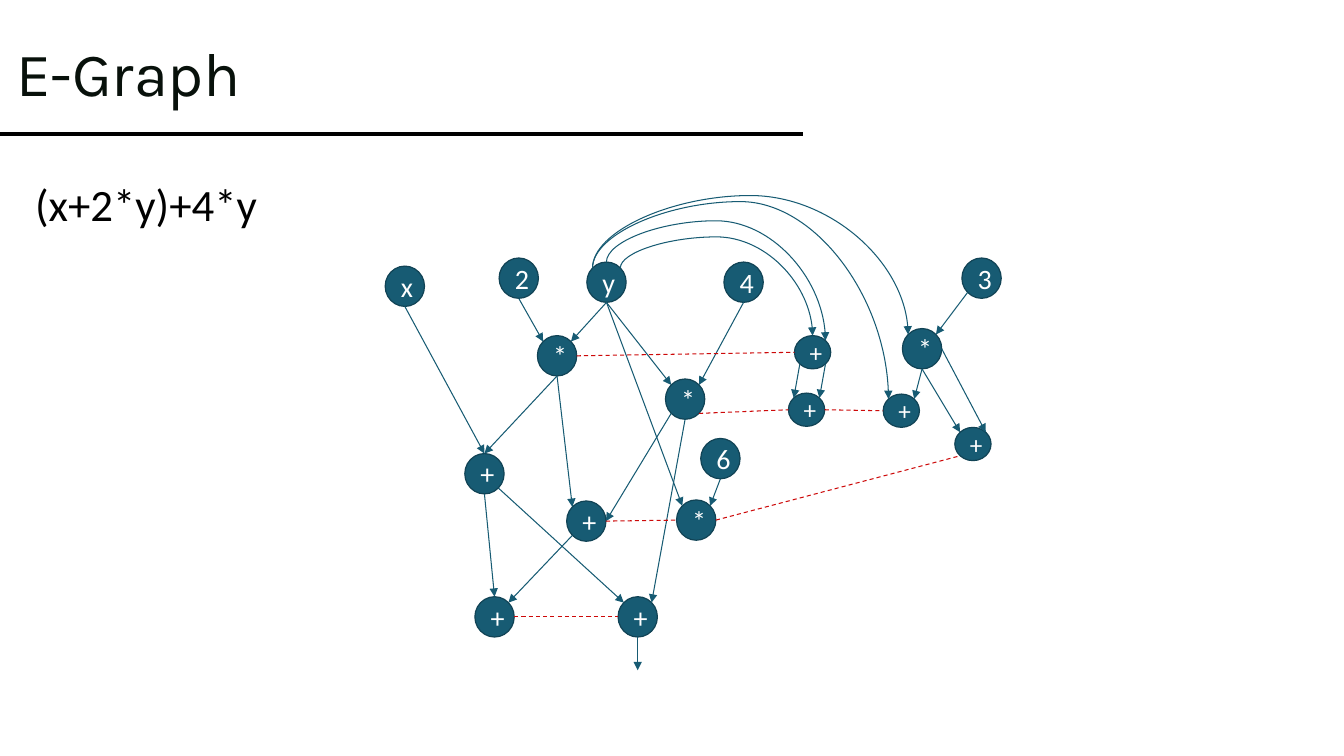
from math import cos, pi, sin

from lxml import etree
from pptx import Presentation
from pptx.dml.color import RGBColor
from pptx.enum.dml import MSO_LINE
from pptx.enum.shapes import MSO_CONNECTOR, MSO_SHAPE
from pptx.enum.text import MSO_ANCHOR, MSO_AUTO_SIZE, PP_ALIGN
from pptx.oxml.ns import qn
from pptx.util import Inches, Pt

STRAIGHT, CURVE = MSO_CONNECTOR.STRAIGHT, MSO_CONNECTOR.CURVE
ELLIPSE = MSO_SHAPE.OVAL
MIDDLE = MSO_ANCHOR.MIDDLE
CENTER, LEFT = PP_ALIGN.CENTER, PP_ALIGN.LEFT
DASH = MSO_LINE.DASH
NO_FIT, FIT_SHAPE = MSO_AUTO_SIZE.NONE, MSO_AUTO_SIZE.SHAPE_TO_FIT_TEXT

THEME = {
    "title": RGBColor(0x08, 0x11, 0x0B),
    "black": RGBColor(0, 0, 0),
    "white": RGBColor(255, 255, 255),
    "node": RGBColor(0x17, 0x5B, 0x73),
    "outline": RGBColor(0x11, 0x43, 0x55),
    "equal": RGBColor(0xCD, 0x09, 0x09),
    "title_font": "Karla",
    "body_font": "Calibri",
    "title_size": Pt(44),
    "formula_size": Pt(32),
    "large_size": Pt(20),
    "small_size": Pt(18),
}

# Grid of square cells, ten to the inch
CELL = Inches(0.1)
LARGE, SMALL = (3.9, 4), (3.6, 3.3)

# Connection sites of an ellipse, counter-clockwise from the top
TOP, TOP_LEFT, LEFT_SIDE, BOTTOM_LEFT, BOTTOM, BOTTOM_RIGHT, RIGHT_SIDE, TOP_RIGHT = range(8)


def set_font(paragraph, name, size, color):
    paragraph.font.name = name
    paragraph.font.size = size
    paragraph.font.color.rgb = color


def add_line(kind, start, end, color, width=0.75, arrow=False):
    connector = slide.shapes.add_connector(kind, *(round(value * CELL) for value in start + end))
    connector.line.color.rgb = color
    connector.line.width = Pt(width)
    if arrow:
        etree.SubElement(connector.line._get_or_add_ln(), qn("a:tailEnd"), type="triangle")
    etree.SubElement(connector.element.spPr, qn("a:effectLst"))
    return connector


presentation = Presentation()
presentation.slide_width = Inches(13.33)
presentation.slide_height = Inches(7.5)
slide = presentation.slides.add_slide(presentation.slide_layouts[5])

# Title and its rule
title = slide.shapes.title
title.left, title.top, title.width, title.height = (round(n * CELL) for n in (0.6, 0.3, 75.1, 14.5))
title.text_frame.text = "E-Graph"
title.text_frame.vertical_anchor = MIDDLE
title.text_frame.auto_size = NO_FIT
paragraph = title.text_frame.paragraphs[0]
paragraph.alignment = LEFT
paragraph.line_spacing = 0.9
set_font(paragraph, THEME["title_font"], THEME["title_size"], THEME["title"])
add_line(STRAIGHT, (0, 13.3), (79.6, 13.3), THEME["black"], 2.25)

# Formula
formula = slide.shapes.add_textbox(*(round(n * CELL) for n in (2.5, 17, 24.3, 6.4)))
formula.text_frame.text = "(x+2*y)+4*y"
formula.text_frame.word_wrap = False
formula.text_frame.auto_size = FIT_SHAPE
set_font(formula.text_frame.paragraphs[0], THEME["body_font"], THEME["formula_size"], THEME["black"])

# Nodes: label, left column, top row, size
NODES = {
    "x": ("x", 38.2, 26.4, LARGE),
    "y": ("y", 58.2, 26, LARGE),
    "two": ("2", 49.5, 25.6, LARGE),
    "four": ("4", 71.8, 26, LARGE),
    "six": ("6", 69.5, 43.5, LARGE),
    "three": ("3", 95.4, 25.6, LARGE),
    "2y": ("*", 53.3, 33.3, LARGE),
    "4y": ("*", 66, 37.6, LARGE),
    "6y": ("*", 67.1, 49.6, LARGE),
    "3y": ("*", 89.5, 32.6, LARGE),
    "x+2y": ("+", 46.1, 45, LARGE),
    "2y+4y": ("+", 56.2, 49.7, LARGE),
    "x+6y": ("+", 47.1, 59.2, LARGE),
    "result": ("+", 61.3, 59.2, LARGE),
    "y+y": ("+", 78.8, 33.3, SMALL),
    "2y+2y": ("+", 78.2, 39, SMALL),
    "y+3y": ("+", 87.6, 39.1, SMALL),
    "3y+3y": ("+", 94.7, 42.4, SMALL),
}
node_shapes = {}
sites = {}
for name, (label, left, top, (width, height)) in NODES.items():
    shape = slide.shapes.add_shape(ELLIPSE, *(round(n * CELL) for n in (left, top, width, height)))
    shape.shadow.inherit = False
    shape.fill.solid()
    shape.fill.fore_color.rgb = THEME["node"]
    shape.line.color.rgb = THEME["outline"]
    shape.line.width = Pt(0.85)
    shape.text_frame.text = label
    shape.text_frame.vertical_anchor = MIDDLE
    paragraph = shape.text_frame.paragraphs[0]
    paragraph.alignment = CENTER
    size = THEME["large_size"] if height == LARGE[1] else THEME["small_size"]
    set_font(paragraph, THEME["body_font"], size, THEME["white"])
    node_shapes[name] = shape
    for site in range(8):
        angle = site * pi / 4
        sites[name, site] = (left + width / 2 * (1 - sin(angle)), top + height / 2 * (1 - cos(angle)))

# Straight edges: arrows carry operands, dashes join equal nodes
ARROWS = [
    ("y", BOTTOM, "2y", TOP_RIGHT),
    ("two", BOTTOM, "2y", TOP_LEFT),
    ("x", BOTTOM, "x+2y", TOP),
    ("2y", BOTTOM, "x+2y", TOP),
    ("x+2y", BOTTOM_RIGHT, "result", TOP_LEFT),
    ("4y", BOTTOM, "result", TOP_RIGHT),
    ("y", BOTTOM, "4y", TOP_LEFT),
    ("four", BOTTOM, "4y", TOP_RIGHT),
    ("y+y", BOTTOM_LEFT, "2y+2y", TOP_LEFT),
    ("y+y", BOTTOM_RIGHT, "2y+2y", TOP_RIGHT),
    ("2y+4y", BOTTOM_LEFT, "x+6y", TOP_RIGHT),
    ("2y", BOTTOM, "2y+4y", TOP_LEFT),
    ("4y", BOTTOM_LEFT, "2y+4y", RIGHT_SIDE),
    ("x+2y", BOTTOM, "x+6y", TOP),
    ("y", BOTTOM, "6y", TOP_LEFT),
    ("six", BOTTOM, "6y", TOP_RIGHT),
    ("three", BOTTOM_LEFT, "3y", TOP_RIGHT),
    ("3y", BOTTOM, "y+3y", TOP_RIGHT),
    ("3y", BOTTOM, "3y+3y", TOP_LEFT),
    ("3y", RIGHT_SIDE, "3y+3y", TOP_RIGHT),
]
EQUALITIES = [
    ("2y", RIGHT_SIDE, "y+y", LEFT_SIDE),
    ("4y", BOTTOM_RIGHT, "2y+2y", LEFT_SIDE),
    ("x+6y", RIGHT_SIDE, "result", LEFT_SIDE),
    ("2y+4y", RIGHT_SIDE, "6y", LEFT_SIDE),
    ("2y+2y", RIGHT_SIDE, "y+3y", LEFT_SIDE),
    ("6y", RIGHT_SIDE, "3y+3y", BOTTOM_LEFT),
]
for edges, color, arrow in ((ARROWS, THEME["node"], True), (EQUALITIES, THEME["equal"], False)):
    for source, source_site, target, target_site in edges:
        edge = add_line(STRAIGHT, sites[source, source_site], sites[target, target_site], color, arrow=arrow)
        if not arrow:
            edge.line.dash_style = DASH
        links = edge.element.nvCxnSpPr.cNvCxnSpPr
        for tag, name, site in (("a:stCxn", source, source_site), ("a:endCxn", target, target_site)):
            etree.SubElement(links, qn(tag), id=str(node_shapes[name].shape_id), idx=str(site))

# Output arrow
column, row = sites["result", BOTTOM]
add_line(STRAIGHT, (column, row), (column, row + 3.3), THEME["node"], arrow=True)

# Arcs from y, with the row of their control points
ARCS = [
    (TOP_RIGHT, "y+y", TOP, 23.5),
    (TOP, "y+y", TOP_RIGHT, 21.9),
    (TOP_LEFT, "3y", TOP_LEFT, 19.4),
    (TOP_LEFT, "y+3y", TOP_LEFT, 20),
]
for source_site, target, target_site, peak in ARCS:
    (x1, y1), (x2, y2) = sites["y", source_site], sites[target, target_site]
    middle_x, middle_y = (x1 + x2) / 2, (y1 + y2) / 2
    half_width, half_height = (y2 - y1) / 2, (x2 - x1) / 2
    arc = add_line(CURVE, (middle_x - half_width, middle_y - half_height),
                   (middle_x + half_width, middle_y + half_height), THEME["node"], arrow=True)
    arc.rotation = 270
    frame = arc.element.spPr.find(qn("a:xfrm"))
    frame.set("rot", str(270 * 60000))
    frame.set("flipH", "1")
    guides = arc.element.spPr.find(qn("a:prstGeom")).find(qn("a:avLst"))
    bend = round((peak - y1) / (y2 - y1) * 100000)
    etree.SubElement(guides, qn("a:gd"), name="adj1", fmla=f"val {bend}")

presentation.save("out.pptx")
